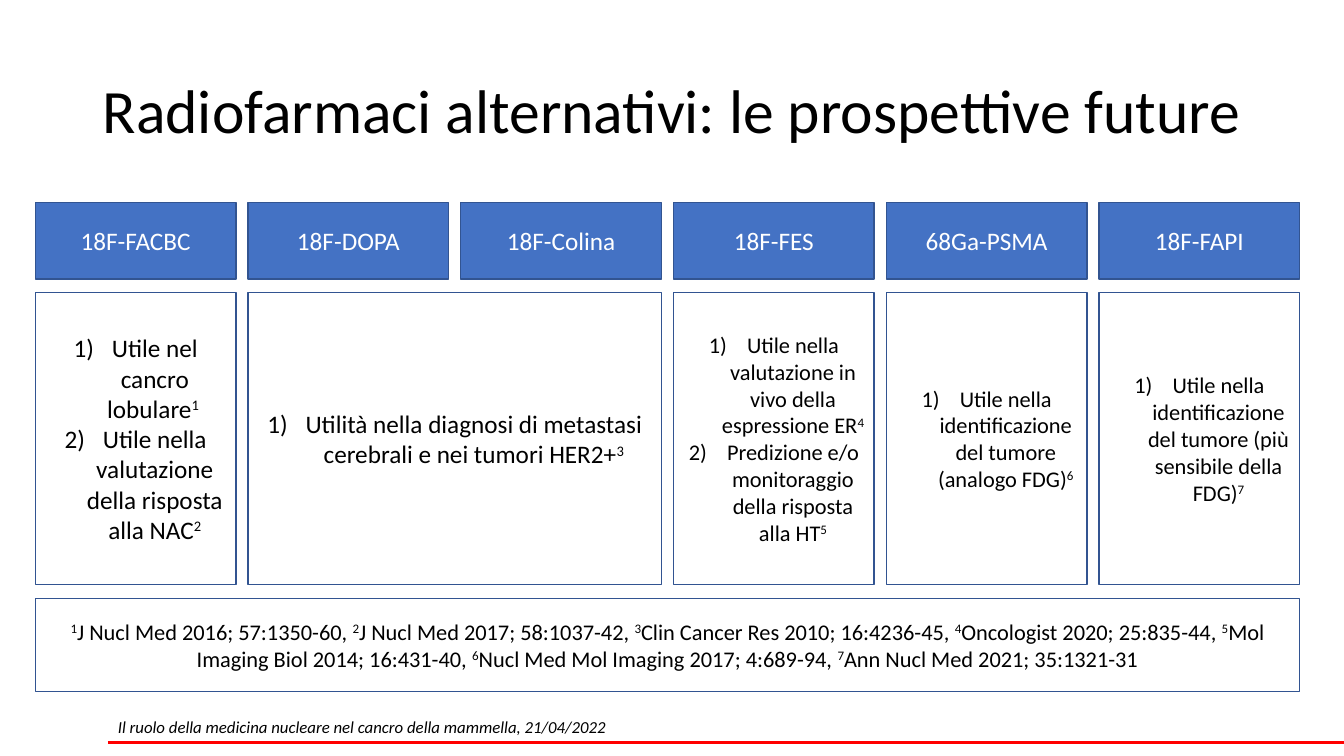
from dataclasses import dataclass

from lxml import etree
from pptx import Presentation
from pptx import util as u
from pptx.dml.color import RGBColor
from pptx.enum import shapes, text
from pptx.oxml.ns import qn


@dataclass(frozen=True)
class Theme:
    font: str = "Calibri"
    black: str = "000000"
    white: str = "FFFFFF"
    blue: str = "4472C4"
    border: str = "325491"
    red: str = "FF0000"
    title: int = 44
    large: int = 18
    small: int = 16
    footer: int = 12


T = Theme()
WIDTH, HEIGHT = 13.33, 7.5

# Column grid: six tracers of equal width
LEFT, PITCH, COL_W = 0.35, 2.11, 1.99
HEAD_Y, HEAD_H = 2.01, 0.76
BODY_Y, BODY_H = 2.9, 2.9

TRACERS = ["18F-FACBC", "18F-DOPA", "18F-Colina", "18F-FES", "68Ga-PSMA", "18F-FAPI"]

# First column, columns spanned, type size, points; text between bars is superscript
USES = [
    (0, 1, T.large, ["Utile nel cancro lobulare|1 |",
                     "Utile nella valutazione della risposta alla NAC|2|"]),
    (1, 2, T.large, ["Utilità nella diagnosi di metastasi cerebrali e nei tumori HER2+|3|"]),
    (3, 1, T.small, ["Utile nella valutazione in vivo della espressione ER|4|",
                     "Predizione e/o monitoraggio della risposta alla HT|5|"]),
    (4, 1, T.small, ["Utile nella identificazione del tumore (analogo FDG)|6|"]),
    (5, 1, T.small, ["Utile nella identificazione del tumore (più sensibile della FDG)|7|"]),
]

REFERENCES = [
    "J Nucl Med 2016; 57:1350-60", "J Nucl Med 2017; 58:1037-42",
    "Clin Cancer Res 2010; 16:4236-45", "Oncologist 2020; 25:835-44",
    "Mol Imaging Biol 2014; 16:431-40", "Nucl Med Mol Imaging 2017; 4:689-94",
    "Ann Nucl Med 2021; 35:1321-31",
]


def span(col, cols=1):
    """Left edge and width of a run of columns."""
    return LEFT + col * PITCH, (cols - 1) * PITCH + COL_W


def inches(*values):
    return [u.Inches(v) for v in values]


def write(p, content, size, color=T.black, **extra):
    """Fill a paragraph; every second piece between bars is superscript."""
    formats = {"name": T.font, "size": u.Pt(size), **extra}
    for i, piece in enumerate(content.split("|")):
        if not piece:
            continue
        r = p.add_run()
        r.text = piece
        for key, value in formats.items():
            setattr(r.font, key, value)
        r.font.color.rgb = RGBColor.from_string(color)
        if i % 2:
            r.font._element.set("baseline", "30000")


def number(p):
    """Number a paragraph as 1), 2) with a hanging indent."""
    pPr = p._p.get_or_add_pPr()
    pPr.set("marL", str(u.Inches(0.38)))
    pPr.set("indent", str(u.Inches(-0.38)))
    etree.SubElement(pPr, qn("a:buFont"), typeface="+mj-lt")
    etree.SubElement(pPr, qn("a:buAutoNum"), type="arabicParenR")


def box(s, x, y, w, h, lines, size, color=T.black, fill=None, numbered=False):
    sp = s.shapes.add_shape(shapes.MSO_SHAPE.RECTANGLE, *inches(x, y, w, h))
    sp.shadow.inherit = False
    if fill:
        sp.fill.solid()
        sp.fill.fore_color.rgb = RGBColor.from_string(fill)
    else:
        sp.fill.background()
    sp.line.color.rgb = RGBColor.from_string(T.border)
    sp.line.width = u.Pt(1)
    tf = sp.text_frame
    tf.word_wrap = True
    tf.vertical_anchor = text.MSO_ANCHOR.MIDDLE
    for i, line in enumerate(lines):
        p = tf.add_paragraph() if i else tf.paragraphs[0]
        p.alignment = text.PP_ALIGN.CENTER
        if numbered:
            number(p)
        write(p, line, size, color)


def add_title(s, x, y, w, h):
    tf = s.shapes.add_textbox(*inches(x, y, w, h)).text_frame
    tf.word_wrap = True
    tf.vertical_anchor = text.MSO_ANCHOR.MIDDLE
    tf.paragraphs[0].line_spacing = 0.9
    write(tf.paragraphs[0], "Radiofarmaci alternativi: le prospettive future", T.title)


def add_tracers(s, y, h):
    for col, name in enumerate(TRACERS):
        x, w = span(col)
        box(s, x, y, w, h, [name], T.large, T.white, T.blue)


def add_uses(s, y, h):
    for col, cols, size, points in USES:
        x, w = span(col, cols)
        box(s, x, y, w, h, points, size, numbered=True)


def add_references(s, y, h):
    x, w = span(0, len(TRACERS))
    line = ", ".join(f"|{n}|{ref}" for n, ref in enumerate(REFERENCES, 1))
    box(s, x, y, w, h, [line], T.small)


def add_footer(s, x, y, w, h):
    # Red rule running to the right edge
    rule_y = y + 0.31
    rule = s.shapes.add_connector(shapes.MSO_CONNECTOR.STRAIGHT,
                                  *inches(x, rule_y, WIDTH, rule_y))
    rule.line.color.rgb = RGBColor.from_string(T.red)
    rule.line.width = u.Pt(2.25)
    etree.SubElement(rule._element.spPr, qn("a:effectLst"))
    # Event and date
    tf = s.shapes.add_textbox(*inches(x, y, w, h)).text_frame
    tf.word_wrap = False
    tf.auto_size = text.MSO_AUTO_SIZE.SHAPE_TO_FIT_TEXT
    write(tf.paragraphs[0],
          "Il ruolo della medicina nucleare nel cancro della mammella, 21/04/2022",
          T.footer, italic=True)


def main():
    prs = Presentation()
    prs.slide_width, prs.slide_height = inches(WIDTH, HEIGHT)
    s = prs.slides.add_slide(prs.slide_layouts[6])
    add_title(s, 0.92, 0.4, 11.5, 1.45)
    add_tracers(s, HEAD_Y, HEAD_H)
    add_uses(s, BODY_Y, BODY_H)
    add_references(s, 5.94, 0.92)
    add_footer(s, 1.07, 7.06, 5.18, 0.3)
    prs.save("out.pptx")


if __name__ == "__main__":
    main()
